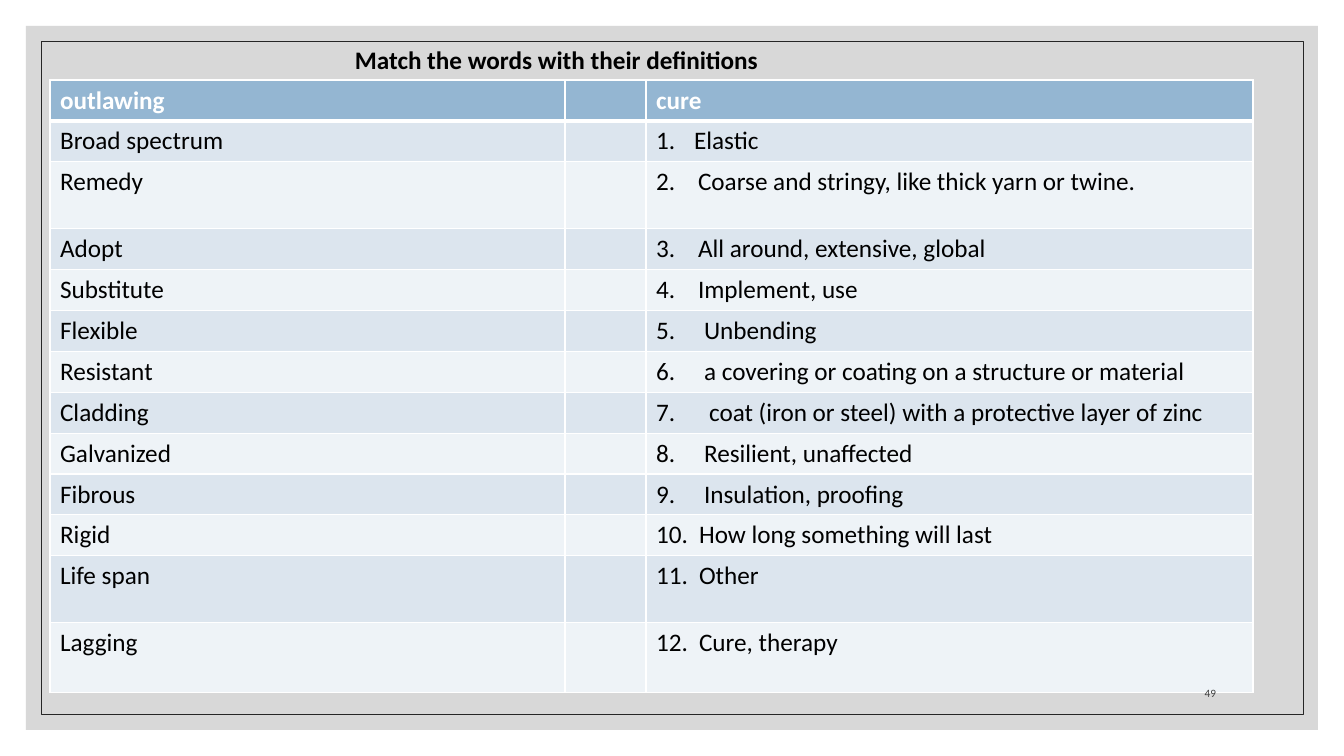
from dataclasses import dataclass

from lxml import etree
from pptx import Presentation
from pptx.dml.color import RGBColor
from pptx.enum.shapes import MSO_SHAPE
from pptx.enum.text import MSO_ANCHOR, PP_ALIGN
from pptx.oxml.ns import qn
from pptx.util import Emu, Pt

EMU_PER_PX = 914400 / 100.8
RECTANGLE = MSO_SHAPE.RECTANGLE
TOP, BOTTOM = MSO_ANCHOR.TOP, MSO_ANCHOR.BOTTOM
LEFT, RIGHT = PP_ALIGN.LEFT, PP_ALIGN.RIGHT

COLORS = {
    "panel": "BFBFBF",
    "frame": "262626",
    "header": "94B6D2",
    "odd": "DCE5EE",
    "even": "EEF3F7",
    "white": "FFFFFF",
    "black": "000000",
    "number": "404040",
}
FORMATS = {
    "title": {"size": Pt(18), "bold": True, "name": "Calibri"},
    "header": {"size": Pt(18), "bold": True, "name": "Calibri"},
    "body": {"size": Pt(18), "bold": False, "name": "Calibri"},
    "number": {"size": Pt(8), "bold": False, "name": "Calibri"},
}
COLUMN_WIDTHS = (515, 81, 607)
THIN, THICK = Pt(1), Pt(3)


@dataclass(frozen=True)
class Box:
    left: int
    top: int
    width: int
    height: int

    def emu(self) -> tuple[Emu, ...]:
        return tuple(map(px, (self.left, self.top, self.width, self.height)))


@dataclass(frozen=True)
class Entry:
    word: str
    definition: str
    indent: int
    height: int = 40


ENTRIES = (
    Entry("Broad spectrum", "Elastic", 38),
    Entry("Remedy", "Coarse and stringy, like thick yarn or twine.", 42, 67),
    Entry("Adopt", "All around, extensive, global", 42),
    Entry("Substitute", "Implement, use", 42),
    Entry("Flexible", "Unbending", 48),
    Entry("Resistant", "a covering or coating on a structure or material", 48),
    Entry("Cladding", "coat (iron or steel) with a protective layer of zinc", 53),
    Entry("Galvanized", "Resilient, unaffected", 48),
    Entry("Fibrous", "Insulation, proofing", 48),
    Entry("Rigid", "How long something will last", 43),
    Entry("Life span", "Other", 43, 67),
    Entry("Lagging", "Cure, therapy", 43, 70),
)


def px(length: int) -> Emu:
    return Emu(round(length * EMU_PER_PX))


def rgb(color: str) -> RGBColor:
    return RGBColor.from_string(COLORS[color])


def write(paragraph, text: str, style: str, color: str) -> None:
    paragraph.text = text
    for name, value in FORMATS[style].items():
        setattr(paragraph.font, name, value)
    paragraph.font.color.rgb = rgb(color)


def add_rectangle(slide, box: Box):
    shape = slide.shapes.add_shape(RECTANGLE, *box.emu())
    shape.shadow.inherit = False
    return shape


def add_background(slide) -> None:
    panel = add_rectangle(slide, Box(26, 26, 1292, 704))
    panel.fill.solid()
    panel.fill.fore_color.rgb = rgb("panel")
    panel.line.fill.background()
    color = panel.fill._xPr.find(f"{qn('a:solidFill')}/{qn('a:srgbClr')}")
    etree.SubElement(color, qn("a:alpha"), val="60000")

    frame = add_rectangle(slide, Box(41, 41, 1262, 673))
    frame.fill.background()
    frame.line.color.rgb = rgb("frame")
    frame.line.width = Pt(0.5)


def add_text(slide, box: Box, text: str, style: str, color: str,
             alignment=LEFT, anchor=TOP) -> None:
    frame = slide.shapes.add_textbox(*box.emu()).text_frame
    frame.word_wrap = True
    frame.vertical_anchor = anchor
    write(frame.paragraphs[0], text, style, color)
    frame.paragraphs[0].alignment = alignment


def set_cell(cell, fill: str, top: Emu, bottom: Emu) -> None:
    """Give a cell its fill and white borders."""
    properties = cell._tc.get_or_add_tcPr()
    for side, width in zip("LRTB", (THIN, THIN, top, bottom)):
        line = etree.SubElement(properties, qn(f"a:ln{side}"), w=str(width))
        solid = etree.SubElement(line, qn("a:solidFill"))
        etree.SubElement(solid, qn("a:srgbClr"), val=COLORS["white"])
    cell.fill.solid()
    cell.fill.fore_color.rgb = rgb(fill)


def number_paragraph(paragraph, number: int, indent: int) -> None:
    properties = paragraph._p.get_or_add_pPr()
    properties.set("marL", str(px(indent)))
    properties.set("indent", str(-px(indent)))
    etree.SubElement(properties, qn("a:buFont"), typeface="Calibri")
    etree.SubElement(properties, qn("a:buAutoNum"), type="arabicPeriod",
                     startAt=str(number))


def add_matching_table(slide) -> None:
    heights = [40, *(entry.height for entry in ENTRIES)]
    box = Box(50, 80, sum(COLUMN_WIDTHS), sum(heights))
    table = slide.shapes.add_table(
        len(heights), len(COLUMN_WIDTHS), *box.emu()).table
    table.first_row = table.horz_banding = False
    for column, width in zip(table.columns, COLUMN_WIDTHS):
        column.width = px(width)
    for index, (row, height) in enumerate(zip(table.rows, heights)):
        row.height = px(height)
        fill = "header" if index == 0 else "odd" if index % 2 else "even"
        for cell in row.cells:
            set_cell(cell, fill, THICK if index == 1 else THIN,
                     THICK if index == 0 else THIN)

    for column, text in ((0, "outlawing"), (2, "cure")):
        paragraph = table.cell(0, column).text_frame.paragraphs[0]
        write(paragraph, text, "header", "white")
    for number, entry in enumerate(ENTRIES, start=1):
        word, definition = (table.cell(number, column).text_frame.paragraphs[0]
                            for column in (0, 2))
        write(word, entry.word, "body", "black")
        number_paragraph(definition, number, entry.indent)
        write(definition, entry.definition, "body", "black")


def main() -> None:
    presentation = Presentation()
    presentation.slide_width, presentation.slide_height = px(1344), px(756)
    slide = presentation.slides.add_slide(presentation.slide_layouts[6])
    add_background(slide)
    add_matching_table(slide)
    add_text(slide, Box(345, 39, 765, 40),
             "Match the words with their definitions", "title", "black")
    add_text(slide, Box(1134, 665, 92, 40), "49", "number", "number",
             RIGHT, BOTTOM)
    presentation.save("out.pptx")


if __name__ == "__main__":
    main()
